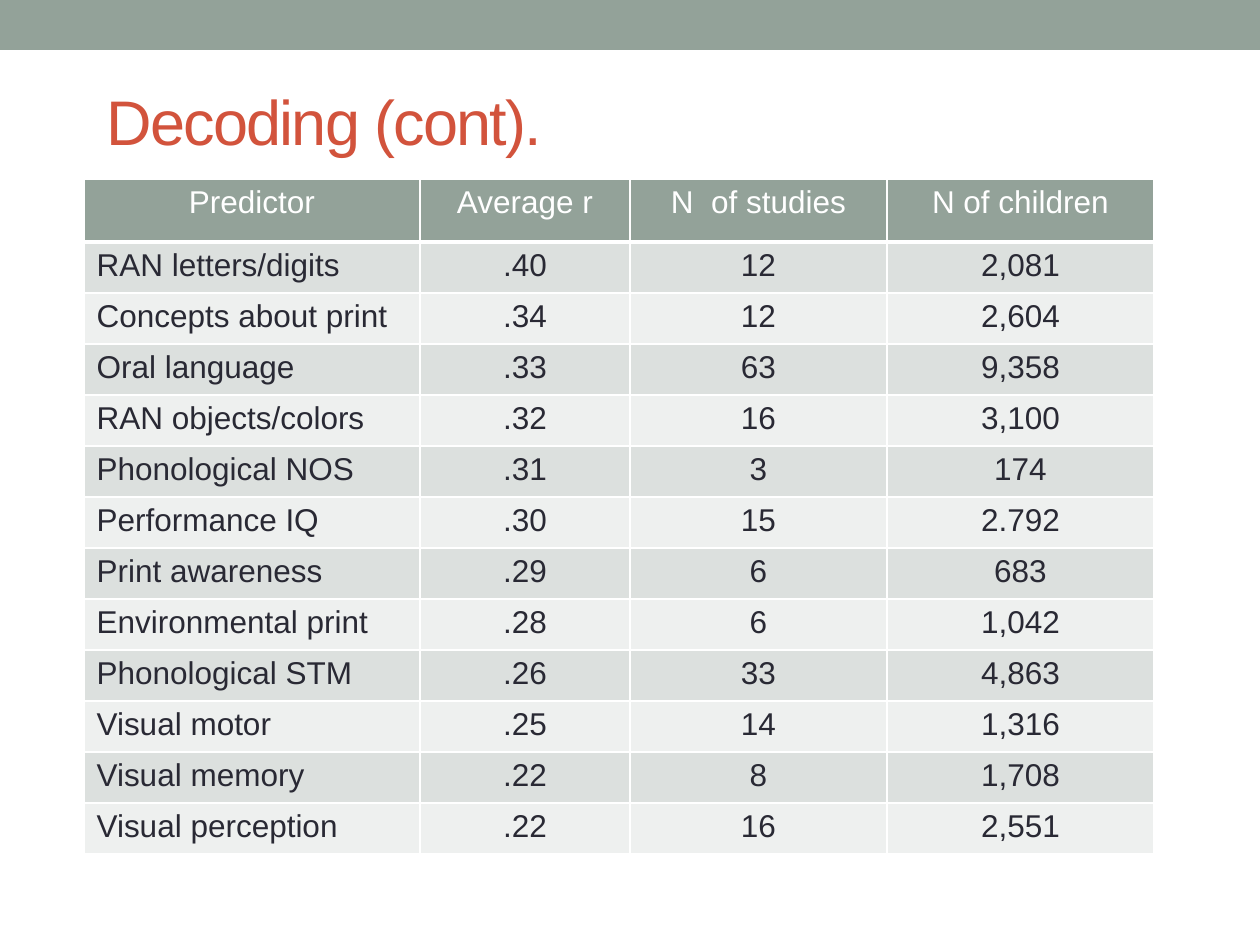
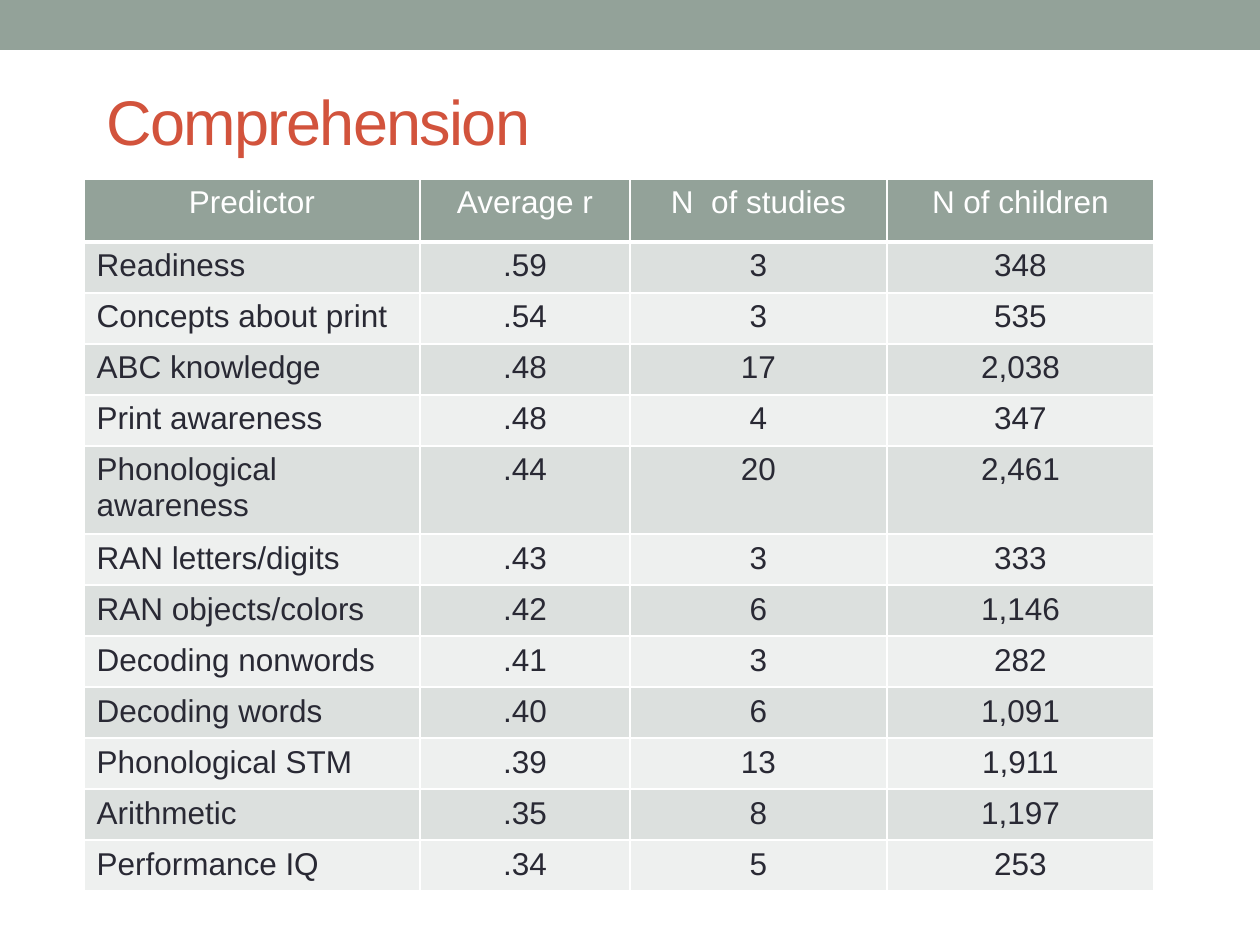
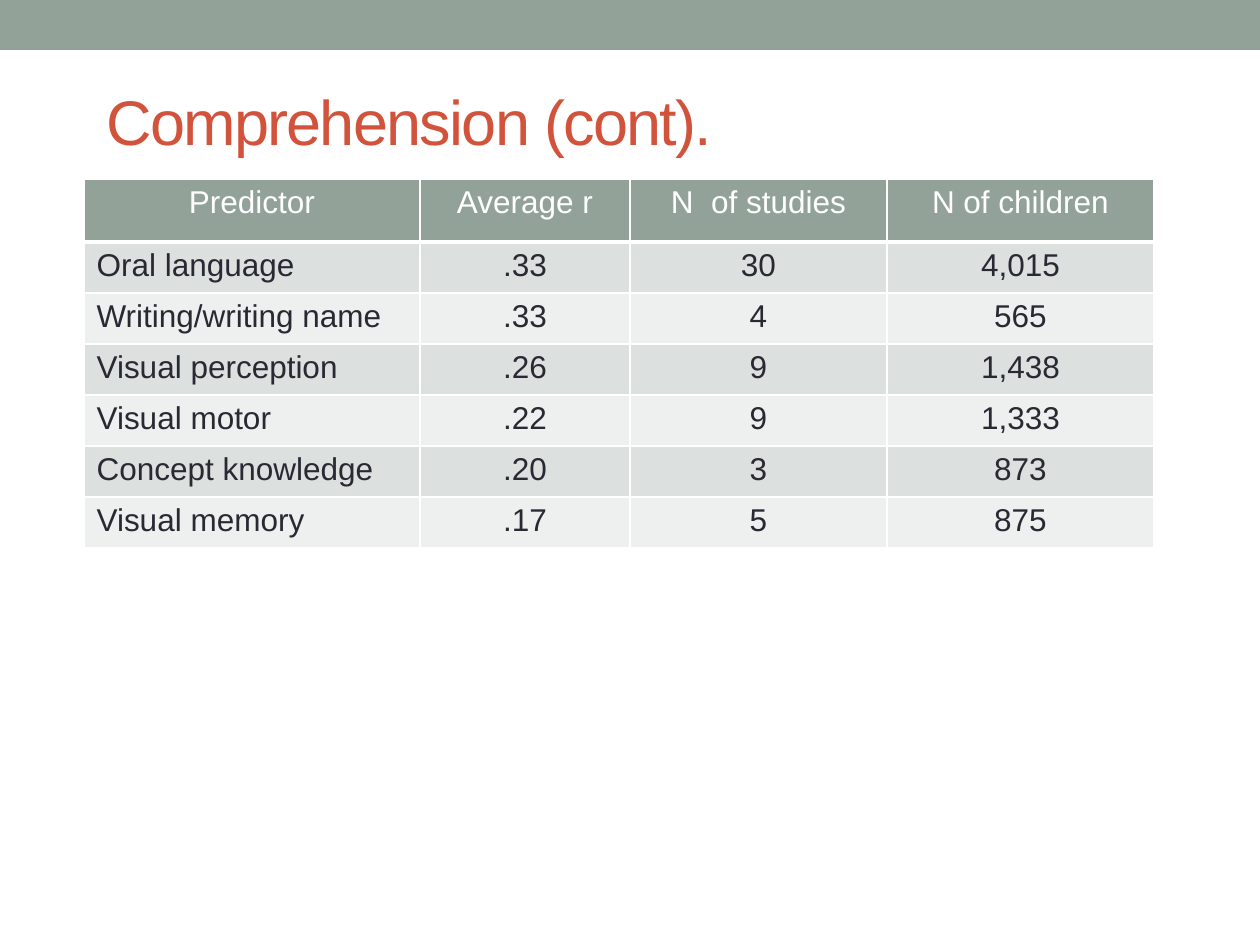
from lxml import etree
from pptx import Presentation
from pptx import util as u
from pptx.dml.color import RGBColor
from pptx.enum import shapes, text
from pptx.oxml.ns import qn

SAGE = RGBColor(0x93, 0xA2, 0x99)
RUST = RGBColor(0xD2, 0x53, 0x3C)
INK = RGBColor(0x29, 0x29, 0x34)
WHITE = RGBColor(0xFF, 0xFF, 0xFF)
STRIPES = RGBColor(0xDC, 0xE0, 0xDE), RGBColor(0xEE, 0xF0, 0xEF)
FONT = "Arial"

BAND = 0, 0, 1260, 50
TITLE = 94, 84, 1071, 73
GRID = 84, 179
COLS = 336, 210, 257, 267
HEAD_H, ROW_H = 63, 51
HEADS = "Predictor", "Average r", "N  of studies", "N of children"

DECODING = [
    ("RAN letters/digits", ".40", "12", "2,081"),
    ("Concepts about print", ".34", "12", "2,604"),
    ("Oral language", ".33", "63", "9,358"),
    ("RAN objects/colors", ".32", "16", "3,100"),
    ("Phonological NOS", ".31", "3", "174"),
    ("Performance IQ", ".30", "15", "2.792"),
    ("Print awareness", ".29", "6", "683"),
    ("Environmental print", ".28", "6", "1,042"),
    ("Phonological STM", ".26", "33", "4,863"),
    ("Visual motor", ".25", "14", "1,316"),
    ("Visual memory", ".22", "8", "1,708"),
    ("Visual perception", ".22", "16", "2,551"),
]
READING = [
    ("Readiness", ".59", "3", "348"),
    ("Concepts about print", ".54", "3", "535"),
    ("ABC knowledge", ".48", "17", "2,038"),
    ("Print awareness", ".48", "4", "347"),
    ("Phonological awareness", ".44", "20", "2,461"),
    ("RAN letters/digits", ".43", "3", "333"),
    ("RAN objects/colors", ".42", "6", "1,146"),
    ("Decoding nonwords", ".41", "3", "282"),
    ("Decoding words", ".40", "6", "1,091"),
    ("Phonological STM", ".39", "13", "1,911"),
    ("Arithmetic", ".35", "8", "1,197"),
    ("Performance IQ", ".34", "5", "253"),
]
READING_MORE = [
    ("Oral language", ".33", "30", "4,015"),
    ("Writing/writing name", ".33", "4", "565"),
    ("Visual perception", ".26", "9", "1,438"),
    ("Visual motor", ".22", "9", "1,333"),
    ("Concept knowledge", ".20", "3", "873"),
    ("Visual memory", ".17", "5", "875"),
]
SLIDES = [
    ("Decoding (cont).", DECODING),
    ("Comprehension", READING),
    ("Comprehension (cont).", READING_MORE),
]


def px(*sizes):
    """Turn pixel lengths into a list of EMU lengths."""
    return [u.Emu(round(size * 914400 / 126)) for size in sizes]


def write(frame, words, size=18, color=INK, align=text.PP_ALIGN.LEFT, space=0):
    """Put one formatted paragraph in a text frame."""
    para = frame.paragraphs[0]
    para.alignment = align
    run = para.add_run()
    run.text = words
    run.font.name, run.font.size = FONT, u.Pt(size)
    run.font.color.rgb = color
    if space:
        run.font._element.set("spc", str(space * 100))


def add_band(slide, box):
    """Draw the top band in the box."""
    band = slide.shapes.add_shape(shapes.MSO_SHAPE.RECTANGLE, *px(*box))
    band.shadow.inherit = False
    band.fill.solid()
    band.fill.fore_color.rgb = SAGE
    band.line.fill.background()


def add_title(slide, box, words):
    """Write the slide title in the box."""
    frame = slide.shapes.add_textbox(*px(*box)).text_frame
    frame.word_wrap = True
    frame.vertical_anchor = text.MSO_ANCHOR.MIDDLE
    write(frame, words, size=36, color=RUST, space=-1)


def edge(cell, low):
    """Give a cell white borders, with the bottom one low points wide."""
    props = cell._tc.get_or_add_tcPr()
    for side, width in zip("LRTB", (1, 1, 1, low)):
        line = etree.SubElement(props, qn(f"a:ln{side}"), w=str(u.Pt(width)))
        fill = etree.SubElement(line, qn("a:solidFill"))
        etree.SubElement(fill, qn("a:srgbClr"), val=str(WHITE))


def add_grid(slide, spot, rows):
    """Draw the table of predictors with its top left corner at the spot."""
    size = sum(COLS), HEAD_H + ROW_H * len(rows)
    shape = slide.shapes.add_table(len(rows) + 1, len(COLS), *px(*spot, *size))
    grid = shape.table
    for col, width in zip(grid.columns, px(*COLS)):
        col.width = width
    for i, row in enumerate([HEADS, *rows]):
        head = i == 0
        grid.rows[i].height = px(HEAD_H if head else ROW_H)[0]
        for j, words in enumerate(row):
            cell = grid.cell(i, j)
            edge(cell, 3 if head else 1)
            cell.fill.solid()
            cell.fill.fore_color.rgb = SAGE if head else STRIPES[(i - 1) % 2]
            mid = head or j > 0
            write(cell.text_frame, words, color=WHITE if head else INK,
                  align=text.PP_ALIGN.CENTER if mid else text.PP_ALIGN.LEFT)


def main():
    """Build the deck and save it."""
    deck = Presentation()
    deck.slide_width, deck.slide_height = px(1260, 945)
    for title, rows in SLIDES:
        slide = deck.slides.add_slide(deck.slide_layouts[6])
        add_band(slide, BAND)
        add_title(slide, TITLE, title)
        add_grid(slide, GRID, rows)
    deck.save("out.pptx")


if __name__ == "__main__":
    main()
